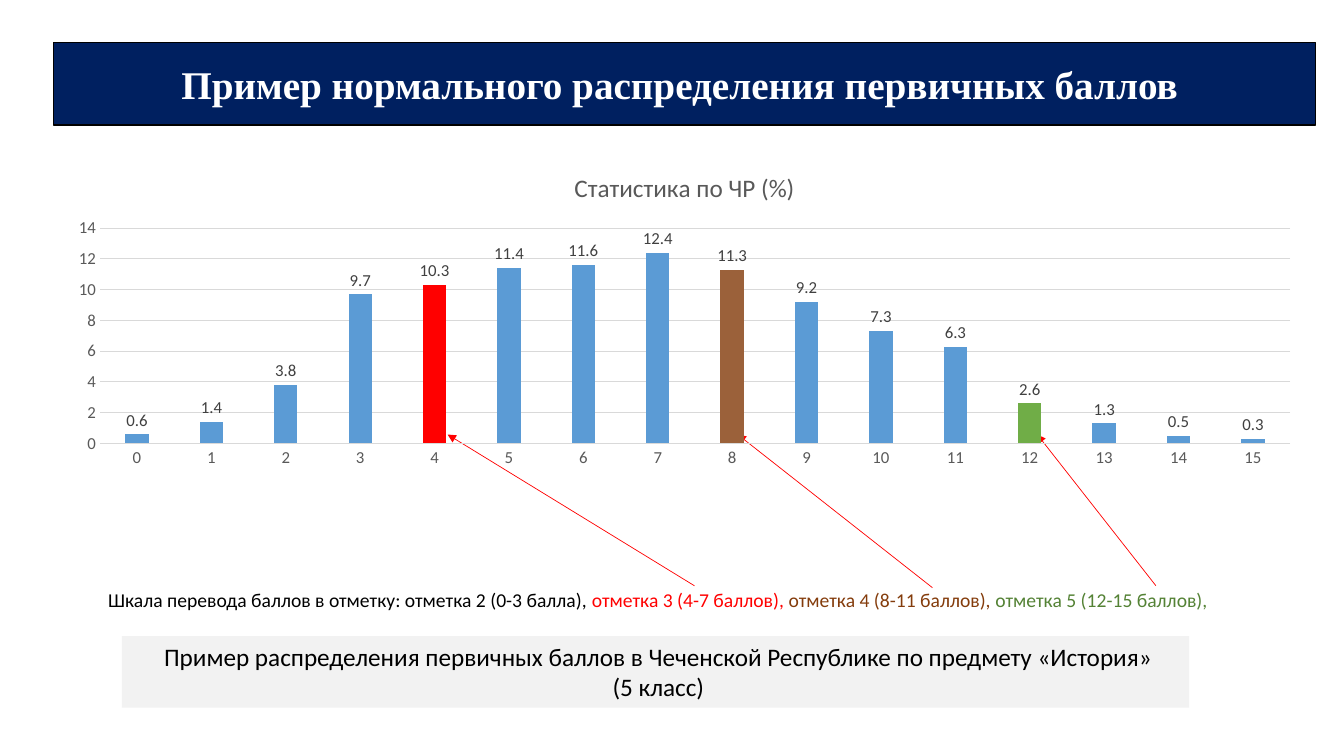
from lxml import etree
from pptx import Presentation
from pptx.chart.data import CategoryChartData
from pptx.dml.color import RGBColor
from pptx.enum.chart import XL_CHART_TYPE, XL_LABEL_POSITION, XL_TICK_MARK
from pptx.enum.shapes import MSO_CONNECTOR, MSO_SHAPE
from pptx.enum.text import MSO_ANCHOR, MSO_AUTO_SIZE, PP_ALIGN
from pptx.oxml.ns import qn
from pptx.util import Cm, Pt

SHARES = [0.6, 1.4, 3.8, 9.7, 10.3, 11.4, 11.6, 12.4,
          11.3, 9.2, 7.3, 6.3, 2.6, 1.3, 0.5, 0.3]
THRESHOLD_COLOURS = {4: "FF0000", 8: "9B613A", 12: "70AD47"}
GRADE_SCALE = [
    ("Шкала перевода баллов в отметку: отметка 2 (0-3 балла),", "000000"),
    (" отметка 3 (4-7 баллов), ", "FF0000"),
    ("отметка 4 (8-11 баллов), ", "843C0C"),
    ("отметка 5 (12-15 баллов), ", "548235"),
]
CAPTION = [
    " Пример распределения первичных баллов в Чеченской Республике по предмету «История»",
    " (5 класс)",
]
ARROWS = [((17.5, 14.76), (11.28, 10.95)),
          ((23.5, 14.81), (18.59, 10.95)),
          ((29.13, 14.76), (26.14, 10.95))]


def colour(value):
    return RGBColor.from_string(value)


def set_attributes(target, values):
    for name, value in values.items():
        setattr(target, name, value)


def set_font(font, size, value, name="Calibri", bold=False):
    set_attributes(font, {"size": Pt(size), "name": name, "bold": bold})
    font.color.rgb = colour(value)


def set_line(line, value, width):
    line.color.rgb = colour(value)
    line.width = Pt(width)


def place(shape, left, top, width, height):
    set_attributes(shape, {"left": Cm(left), "top": Cm(top),
                           "width": Cm(width), "height": Cm(height)})


def set_fill(shape, value):
    shape.fill.solid()
    shape.fill.fore_color.rgb = colour(value)


def write_paragraph(paragraph, runs, size, name="Calibri", bold=False):
    paragraph.alignment = PP_ALIGN.CENTER
    for text, value in runs:
        run = paragraph.add_run()
        run.text = text
        set_font(run.font, size, value, name, bold)


def format_frame(frame, anchor):
    set_attributes(frame, {"word_wrap": True, "vertical_anchor": anchor,
                           "auto_size": MSO_AUTO_SIZE.NONE})


def add_title(slide):
    title = slide.shapes.title
    place(title, 1.35, 1.07, 31.8, 2.08)
    set_fill(title, "002060")
    set_line(title.line, "000000", 1)
    format_frame(title.text_frame, MSO_ANCHOR.MIDDLE)
    write_paragraph(title.text_frame.paragraphs[0],
                    [("Пример нормального распределения первичных баллов ", "FFFFFF")],
                    28, "Times New Roman", True)


def add_caption(slide):
    caption = slide.shapes.add_shape(MSO_SHAPE.RECTANGLE, Cm(3.07), Cm(16.03),
                                     Cm(26.9), Cm(1.8))
    caption.shadow.inherit = False
    set_fill(caption, "F2F2F2")
    caption.line.fill.background()
    frame = caption.text_frame
    format_frame(frame, MSO_ANCHOR.TOP)
    for index, text in enumerate(CAPTION):
        paragraph = frame.add_paragraph() if index else frame.paragraphs[0]
        write_paragraph(paragraph, [(text, "000000")], 18)


def add_grade_scale(slide):
    box = slide.shapes.add_textbox(Cm(0), Cm(14.68), Cm(33.27), Cm(0.86))
    format_frame(box.text_frame, MSO_ANCHOR.TOP)
    write_paragraph(box.text_frame.paragraphs[0], GRADE_SCALE, 14)


def add_arrow(slide, start, end):
    arrow = slide.shapes.add_connector(MSO_CONNECTOR.STRAIGHT,
                                       *map(Cm, start), *map(Cm, end))
    set_line(arrow.line, "FF0000", 0.5)
    etree.SubElement(arrow.line._get_or_add_ln(), qn("a:tailEnd"), type="triangle")
    etree.SubElement(arrow._element.spPr, qn("a:effectLst"))


def format_axes(chart):
    for axis in (chart.category_axis, chart.value_axis):
        set_attributes(axis, {"major_tick_mark": XL_TICK_MARK.NONE,
                              "minor_tick_mark": XL_TICK_MARK.NONE})
        set_font(axis.tick_labels.font, 12, "595959")
    set_line(chart.category_axis.format.line, "D9D9D9", 0.75)
    values = chart.value_axis
    set_attributes(values, {"minimum_scale": 0, "maximum_scale": 14, "major_unit": 2})
    values.format.line.fill.background()
    set_line(values.major_gridlines.format.line, "D9D9D9", 0.75)


def format_columns(plot):
    set_attributes(plot, {"gap_width": 219, "overlap": -27,
                          "vary_by_categories": False, "has_data_labels": True})
    set_attributes(plot.data_labels, {"show_value": True,
                                      "position": XL_LABEL_POSITION.OUTSIDE_END})
    set_font(plot.data_labels.font, 12, "404040")
    series = plot.series[0]
    set_fill(series.format, "5B9BD5")
    for score, value in THRESHOLD_COLOURS.items():
        set_fill(series.points[score].format, value)


def add_score_chart(slide):
    data = CategoryChartData()
    data.categories = [str(score) for score in range(len(SHARES))]
    data.add_series("Series 1", SHARES)
    chart = slide.shapes.add_chart(XL_CHART_TYPE.COLUMN_CLUSTERED, Cm(1.35), Cm(3.89),
                                   Cm(31.8), Cm(8.05), data).chart
    set_attributes(chart, {"has_legend": False, "has_title": True})
    set_font(chart.font, 10, "000000")
    write_paragraph(chart.chart_title.text_frame.paragraphs[0],
                    [("Статистика по ЧР (%)", "595959")], 18)
    chart.chart_title.include_in_layout = False
    format_axes(chart)
    format_columns(chart.plots[0])


def main():
    presentation = Presentation()
    set_attributes(presentation, {"slide_width": Cm(33.87), "slide_height": Cm(19.05)})
    slide = presentation.slides.add_slide(presentation.slide_layouts[5])
    add_title(slide)
    add_caption(slide)
    add_grade_scale(slide)
    for start, end in ARROWS:
        add_arrow(slide, start, end)
    add_score_chart(slide)
    presentation.save("out.pptx")


if __name__ == "__main__":
    main()
